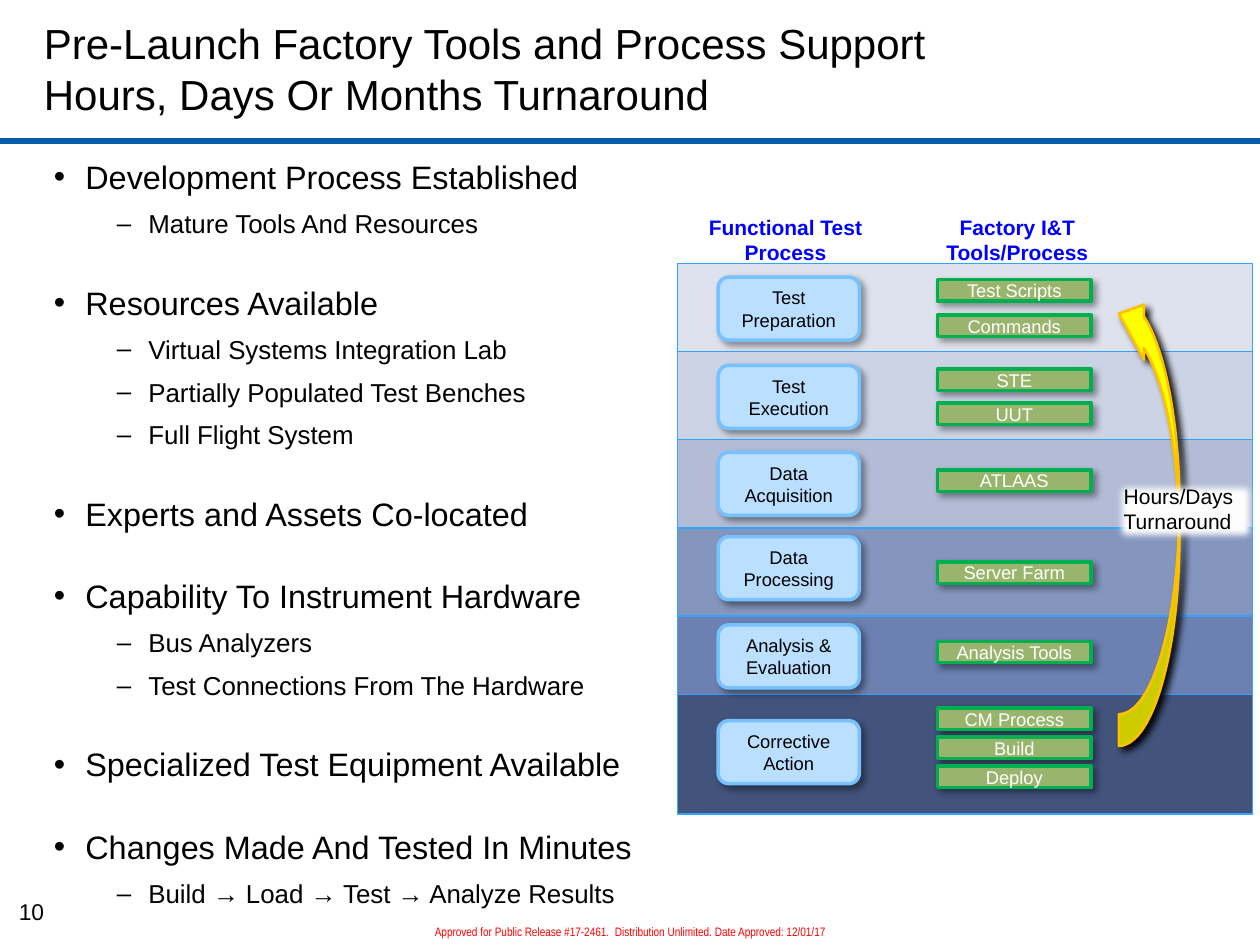
from dataclasses import dataclass
from itertools import accumulate

from lxml import etree
from pptx import Presentation
from pptx.dml.color import RGBColor
from pptx.enum.shapes import MSO_CONNECTOR, MSO_SHAPE
from pptx.enum.text import MSO_ANCHOR, PP_ALIGN
from pptx.oxml.ns import qn
from pptx.util import Emu, Inches, Pt

COLORS = {
    "rule": "005DAA", "text": "000000", "heading": "0000FF", "notice": "FF0000",
    "band_line": "33A3FF", "stage": "BBE0FF", "stage_line": "77C1FF",
    "tool": "99B46C", "tool_line": "00B050", "white": "FFFFFF",
    "arrow": "FFFF00", "arrow_line": "FFC000", "shadow": "000000",
}


@dataclass(frozen=True)
class Style:
    fill: str
    line: str
    line_width: float
    text: str = COLORS["text"]
    shadow_alpha: int = 0


@dataclass(frozen=True)
class Stage:
    label: str
    top: float
    band_height: float
    band_fill: str
    tools: tuple[tuple[str, float], ...]


STAGE_STYLE = Style(COLORS["stage"], COLORS["stage_line"], 2, shadow_alpha=40)
TOOL_STYLE = Style(COLORS["tool"], COLORS["tool_line"], 2, COLORS["white"], 40)
ARROW_STYLE = Style(COLORS["arrow"], COLORS["arrow_line"], 1.5, shadow_alpha=94)

STAGES = [
    Stage("Test\nPreparation", 2.2, 0.7, "DDE2ED", (("Test Scripts", 2.22), ("Commands", 2.5))),
    Stage("Test\nExecution", 2.9, 0.7, "CCD3E4", (("STE", 2.93), ("UUT", 3.2))),
    Stage("Data Acquisition", 3.59, 0.7, "B2BCD6", (("ATLAAS", 3.73),)),
    Stage("Data Processing", 4.26, 0.7, "8496BE", (("Server Farm", 4.46),)),
    Stage("Analysis & Evaluation", 4.96, 0.62, "6C81B1", (("Analysis Tools", 5.09),)),
    Stage("Corrective Action", 5.72, 0.95, "42537C",
          (("CM Process", 5.62), ("Build", 5.85), ("Deploy", 6.08))),
]

TOPICS = [
    ("Development Process Established", ["Mature Tools And Resources"]),
    ("Resources Available", ["Virtual Systems Integration Lab",
                             "Partially Populated Test Benches", "Full Flight System"]),
    ("Experts and Assets Co-located", []),
    ("Capability To Instrument Hardware", ["Bus Analyzers", "Test Connections From The Hardware"]),
    ("Specialized Test Equipment Available", []),
    ("Changes Made And Tested In Minutes", ["Build → Load → Test → Analyze Results"]),
]


def format_paragraph(paragraph, size: float, color: str, align=PP_ALIGN.LEFT,
                     bold: bool = False, font: str = "Arial") -> None:
    paragraph.alignment = align
    paragraph.font.size = Pt(size)
    paragraph.font.name = font
    paragraph.font.bold = bold
    paragraph.font.color.rgb = RGBColor.from_string(color)


def fill_text(shape, text: str, size: float, color: str, align=PP_ALIGN.CENTER,
              anchor=MSO_ANCHOR.MIDDLE, wrap: bool = True, **font_options) -> None:
    frame = shape.text_frame
    frame.word_wrap = wrap
    frame.vertical_anchor = anchor
    frame.text = text
    for paragraph in frame.paragraphs:
        format_paragraph(paragraph, size, color, align, **font_options)


def add_text(slide, box: tuple, text: str, size: float, color: str, **options) -> None:
    fill_text(slide.shapes.add_textbox(*map(Inches, box)), text, size, color, **options)


def add_effects(shape):
    return etree.SubElement(shape._element.spPr, qn("a:effectLst"))


def add_shadow(shape, alpha: int) -> None:
    shadow = etree.SubElement(add_effects(shape), qn("a:outerShdw"), blurRad=str(Pt(4)),
                              dist=str(Pt(3)), dir=str(45 * 60000), algn="tl", rotWithShape="0")
    color = etree.SubElement(shadow, qn("a:srgbClr"), val=COLORS["shadow"])
    etree.SubElement(color, qn("a:alpha"), val=str(alpha * 1000))


def add_styled(slide, preset, box: tuple, style: Style, label: str = ""):
    shape = slide.shapes.add_shape(preset, *map(Inches, box))
    shape.fill.solid()
    shape.fill.fore_color.rgb = RGBColor.from_string(style.fill)
    shape.line.color.rgb = RGBColor.from_string(style.line)
    shape.line.width = Pt(style.line_width)
    if style.shadow_alpha:
        add_shadow(shape, style.shadow_alpha)
    else:
        shape.shadow.inherit = False
    if label:
        fill_text(shape, label, 10.5, style.text)
    return shape


def add_bullet(paragraph, text: str, level: int) -> None:
    mark, indent, size, before = (("•", 0.25, 18.5, 25), ("–", 0.75, 14.8, 6.7))[level]
    paragraph.text = text
    paragraph.level = level
    properties = paragraph._p.get_or_add_pPr()
    properties.set("marL", str(Inches(indent)))
    properties.set("indent", str(Inches(-0.25)))
    etree.SubElement(properties, qn("a:buFont"), typeface="Arial")
    etree.SubElement(properties, qn("a:buChar"), char=mark)
    format_paragraph(paragraph, size, COLORS["text"])
    paragraph.space_before = Pt(before)


def add_topics(slide) -> None:
    frame = slide.shapes.add_textbox(*map(Inches, (0.33, 1.2, 5.14, 5.7))).text_frame
    frame.word_wrap = True
    lines = [(text, level) for topic, details in TOPICS
             for text, level in [(topic, 0), *((detail, 1) for detail in details)]]
    for index, (text, level) in enumerate(lines):
        paragraph = frame.add_paragraph() if index else frame.paragraphs[0]
        add_bullet(paragraph, text, level)
    frame.paragraphs[0].space_before = Pt(0)


def add_process(slide) -> None:
    # Background bands, stacked downwards
    band_tops = accumulate((stage.band_height for stage in STAGES), initial=2.09)
    for stage, top in zip(STAGES, band_tops):
        add_styled(slide, MSO_SHAPE.RECTANGLE, (5.38, top, 4.56, stage.band_height),
                   Style(stage.band_fill, COLORS["band_line"], 0.75))
    # Stages and their tools
    for stage in STAGES:
        add_styled(slide, MSO_SHAPE.ROUNDED_RECTANGLE, (5.7, stage.top, 1.12, 0.5),
                   STAGE_STYLE, stage.label)
        for tool, top in stage.tools:
            add_styled(slide, MSO_SHAPE.RECTANGLE, (7.44, top, 1.22, 0.17), TOOL_STYLE, tool)
    # Column headings
    for left, width, heading in ((5.42, 1.63, "Functional Test\nProcess"),
                                 (7.34, 1.47, "Factory I&T\nTools/Process")):
        add_text(slide, (left, 1.65, width, 0.54), heading, 12, COLORS["heading"],
                 anchor=MSO_ANCHOR.TOP, wrap=False, bold=True)


def add_turnaround(slide) -> None:
    # Return arrow, pointing up
    arrow = add_styled(slide, MSO_SHAPE.CURVED_LEFT_ARROW, (8.88, 2.27, 0.48, 3.65), ARROW_STYLE)
    arrow._element.spPr.xfrm.set("flipV", "1")
    for index, value in enumerate((0.523, 0.911, 0.414)):
        arrow.adjustments[index] = value
    # Label with soft edges
    label = slide.shapes.add_shape(MSO_SHAPE.RECTANGLE, *map(Inches, (8.82, 3.79, 1.18, 0.54)))
    label.fill.solid()
    label.fill.fore_color.rgb = RGBColor.from_string(COLORS["white"])
    label.line.fill.background()
    etree.SubElement(add_effects(label), qn("a:softEdge"), rad=str(Emu(63500)))
    fill_text(label, "Hours/Days\nTurnaround", 12, COLORS["text"], align=PP_ALIGN.LEFT,
              anchor=MSO_ANCHOR.TOP, wrap=False)


def main() -> None:
    deck = Presentation()
    deck.slide_width, deck.slide_height = Inches(10), Inches(7.5)
    slide = deck.slides.add_slide(deck.slide_layouts[6])

    # Title and rule
    rule = slide.shapes.add_connector(MSO_CONNECTOR.STRAIGHT, 0, Inches(1.12),
                                      Inches(10), Inches(1.12))
    rule.line.color.rgb = RGBColor.from_string(COLORS["rule"])
    rule.line.width = Pt(3.75)
    add_effects(rule)
    add_text(slide, (0.25, 0.08, 7.33, 0.92),
             "Pre-Launch Factory Tools and Process Support\nHours, Days Or Months Turnaround",
             24, COLORS["text"], align=PP_ALIGN.LEFT)

    add_topics(slide)
    add_process(slide)
    add_turnaround(slide)

    # Page number and release notice
    add_text(slide, (0.03, 7.08, 0.44, 0.33), "10", 13, COLORS["text"],
             anchor=MSO_ANCHOR.TOP, wrap=False)
    add_text(slide, (2.78, 7.28, 4.44, 0.22),
             "Approved for Public Release #17-2461.  Distribution Unlimited. Date Approved: 12/01/17",
             7, COLORS["notice"], anchor=MSO_ANCHOR.BOTTOM, font="Arial Narrow")
    deck.save("out.pptx")


if __name__ == "__main__":
    main()
